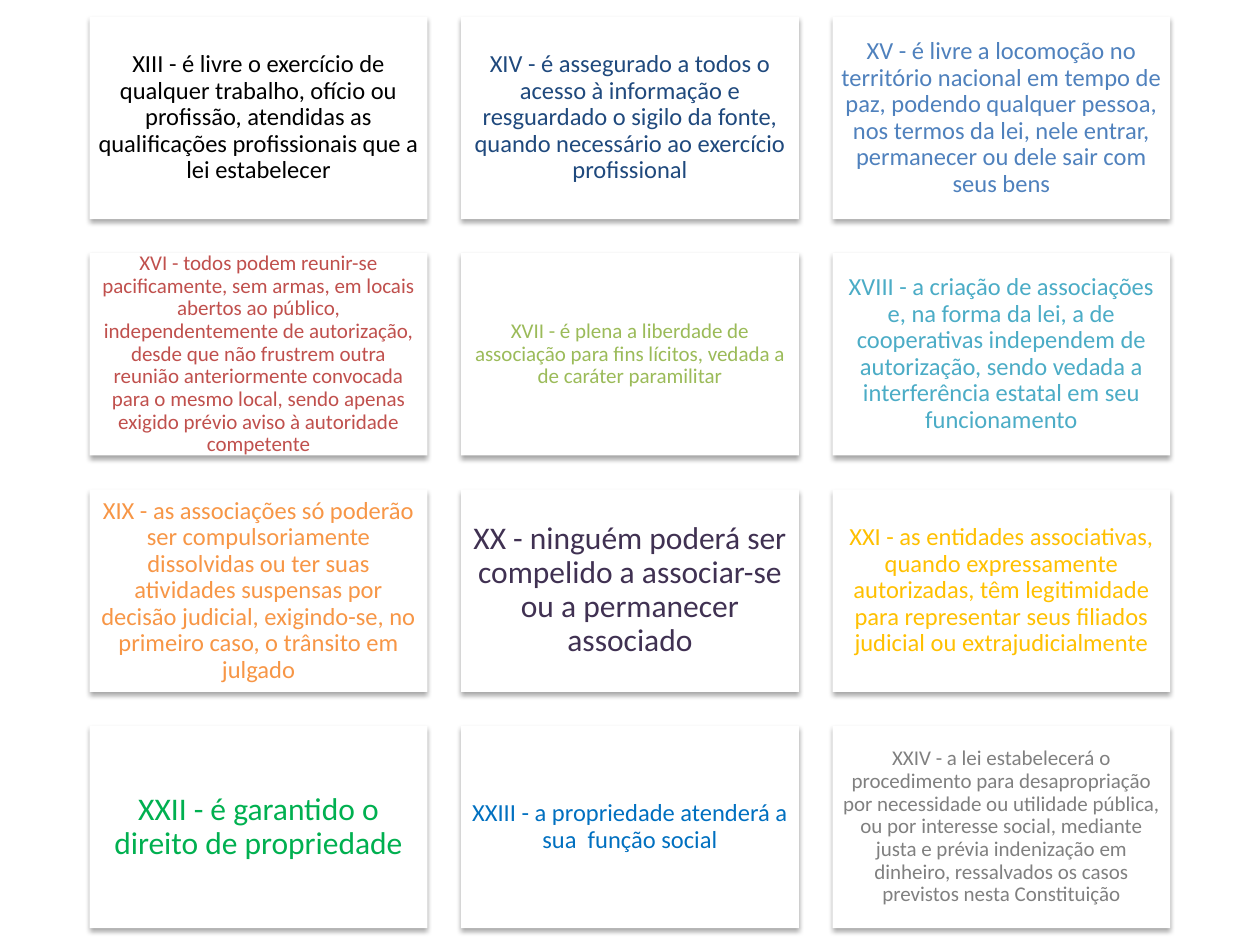
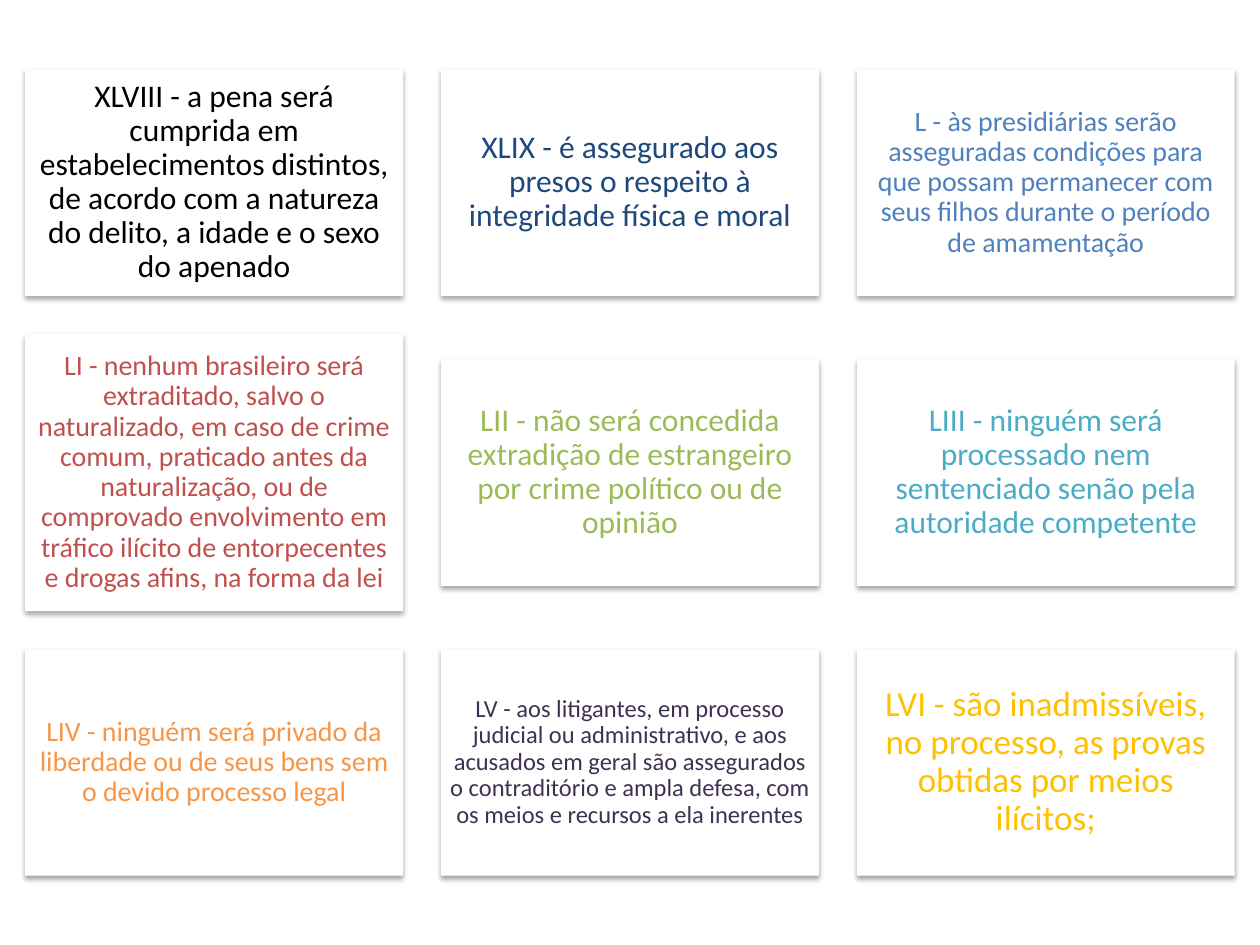
from lxml import etree
from pptx import Presentation
from pptx.dml.color import RGBColor
from pptx.enum import shapes, text
from pptx.oxml import ns
from pptx.util import Inches, Pt

# Shared style
SLIDE_W, SLIDE_H = 10, 7.5
COLUMNS = 3
FONT = "Calibri"
WHITE = RGBColor(0xFF, 0xFF, 0xFF)
BLACK = RGBColor(0x00, 0x00, 0x00)
NAVY = RGBColor(0x1F, 0x49, 0x7D)
STEEL = RGBColor(0x4F, 0x81, 0xBD)
RED = RGBColor(0xC0, 0x50, 0x4D)
OLIVE = RGBColor(0x9B, 0xBB, 0x59)
AQUA = RGBColor(0x4B, 0xAC, 0xC6)
ORANGE = RGBColor(0xF7, 0x96, 0x46)
PURPLE = RGBColor(0x40, 0x31, 0x52)
GOLD = RGBColor(0xFF, 0xC0, 0x00)
GREEN = RGBColor(0x00, 0xB0, 0x50)
BLUE = RGBColor(0x00, 0x70, 0xC0)
GRAY = RGBColor(0x80, 0x80, 0x80)
CARD_COLORS = [BLACK, NAVY, STEEL, RED, OLIVE, AQUA,
               ORANGE, PURPLE, GOLD, GREEN, BLUE, GRAY]

# Clauses: font size and wording
FREEDOMS = [
    (14, "XIII - é livre o exercício de qualquer trabalho, ofício ou profissão, "
         "atendidas as qualificações profissionais que a lei estabelecer"),
    (14, "XIV - é assegurado a todos o acesso à informação e resguardado o sigilo "
         "da fonte, quando necessário ao exercício profissional"),
    (14, "XV - é livre a locomoção no território nacional em tempo de paz, podendo "
         "qualquer pessoa, nos termos da lei, nele entrar, permanecer ou dele sair "
         "com seus bens"),
    (12, "XVI - todos podem reunir-se pacificamente, sem armas, em locais abertos ao "
         "público, independentemente de autorização, desde que não frustrem outra "
         "reunião anteriormente convocada para o mesmo local, sendo apenas exigido "
         "prévio aviso à autoridade competente"),
    (12, "XVII - é plena a liberdade de associação para fins lícitos, vedada a de "
         "caráter paramilitar"),
    (14, "XVIII - a criação de associações e, na forma da lei, a de cooperativas "
         "independem de autorização, sendo vedada a interferência estatal em seu "
         "funcionamento"),
    (14, "XIX - as associações só poderão ser compulsoriamente dissolvidas ou ter "
         "suas atividades suspensas por decisão judicial, exigindo-se, no primeiro "
         "caso, o trânsito em julgado"),
    (18, "XX - ninguém poderá ser compelido a associar-se ou a permanecer associado"),
    (14, "XXI - as entidades associativas, quando expressamente autorizadas, têm "
         "legitimidade para representar seus filiados judicial ou extrajudicialmente"),
    (18, "XXII - é garantido o direito de propriedade"),
    (14, "XXIII - a propriedade atenderá a sua  função social"),
    (12, "XXIV - a lei estabelecerá o procedimento para desapropriação por "
         "necessidade ou utilidade pública, ou por interesse social, mediante justa "
         "e prévia indenização em dinheiro, ressalvados os casos previstos nesta "
         "Constituição"),
]
PENAL_RIGHTS = [
    (18, "XLVIII - a pena será cumprida em estabelecimentos distintos, de acordo com "
         "a natureza do delito, a idade e o sexo do apenado"),
    (18, "XLIX - é assegurado aos presos o respeito à integridade física e moral"),
    (16, "L - às presidiárias serão asseguradas condições para que possam permanecer "
         "com seus filhos durante o período de amamentação"),
    (16, "LI - nenhum brasileiro será extraditado, salvo o naturalizado, em caso de "
         "crime comum, praticado antes da naturalização, ou de comprovado "
         "envolvimento em tráfico ilícito de entorpecentes e drogas afins, na forma "
         "da lei"),
    (18, "LII - não será concedida extradição de estrangeiro por crime político ou "
         "de opinião"),
    (18, "LIII - ninguém será processado nem sentenciado senão pela autoridade "
         "competente"),
    (16, "LIV - ninguém será privado da liberdade ou de seus bens sem o devido "
         "processo legal"),
    (14, "LV - aos litigantes, em processo judicial ou administrativo, e aos "
         "acusados em geral são assegurados o contraditório e ampla defesa, com os "
         "meios e recursos a ela inerentes"),
    (20, "LVI - são inadmissíveis, no processo, as provas obtidas por meios "
         "ilícitos;"),
]


def add_soft_shadow(sp):
    """Drop a blurred shadow straight below the shape."""
    sp.shadow.inherit = False
    effects = sp._element.spPr.find(ns.qn("a:effectLst"))
    shadow = etree.SubElement(effects, ns.qn("a:outerShdw"), blurRad=str(Pt(3.1)),
                              dist=str(Pt(1.8)), dir="5400000", rotWithShape="0")
    color = etree.SubElement(shadow, ns.qn("a:srgbClr"), val=str(BLACK))
    etree.SubElement(color, ns.qn("a:alpha"), val="35000")


def add_card(s, left, top, width, height, clause, color):
    size, wording = clause
    sp = s.shapes.add_shape(shapes.MSO_SHAPE.RECTANGLE, Inches(left), Inches(top),
                            Inches(width), Inches(height))
    sp.fill.solid()
    sp.fill.fore_color.rgb = WHITE
    sp.line.fill.background()
    add_soft_shadow(sp)

    # The inset grows with the type size
    tf = sp.text_frame
    tf.word_wrap = True
    tf.vertical_anchor = text.MSO_ANCHOR.MIDDLE
    tf.margin_left = tf.margin_right = Inches(size / 240)
    tf.margin_top = tf.margin_bottom = Inches(size / 240)
    p = tf.paragraphs[0]
    p.alignment = text.PP_ALIGN.CENTER
    p.line_spacing = 0.9
    r = p.add_run()
    r.text = wording
    r.font.name = FONT
    r.font.size = Pt(size)
    r.font.color.rgb = color


def add_card_grid(s, clauses, width, tall_cards=None):
    """Centre a grid of 5:3 cards; tall_cards maps a card index to its height."""
    gap = width * 0.1
    heights = [width * 0.6] * len(clauses)
    for i, height in (tall_cards or {}).items():
        heights[i] = height
    starts = range(0, len(clauses), COLUMNS)
    row_heights = [max(heights[i:i + COLUMNS]) for i in starts]
    left = (SLIDE_W - COLUMNS * width - (COLUMNS - 1) * gap) / 2
    top = (SLIDE_H - sum(row_heights) - (len(row_heights) - 1) * gap) / 2

    for i, clause in enumerate(clauses):
        row, column = divmod(i, COLUMNS)
        row_top = top + sum(row_heights[:row]) + row * gap
        card_top = row_top + (row_heights[row] - heights[i]) / 2
        add_card(s, left + column * (width + gap), card_top, width, heights[i],
                 clause, CARD_COLORS[i])


def main():
    prs = Presentation()
    prs.slide_width, prs.slide_height = Inches(SLIDE_W), Inches(SLIDE_H)
    blank = prs.slide_layouts[6]

    # Freedoms and property
    add_card_grid(prs.slides.add_slide(blank), FREEDOMS, 2.68)

    # Penal and procedural rights, with a taller card for clause LI
    add_card_grid(prs.slides.add_slide(blank), PENAL_RIGHTS, 3, {3: 2.2})

    prs.save("out.pptx")


if __name__ == "__main__":
    main()
